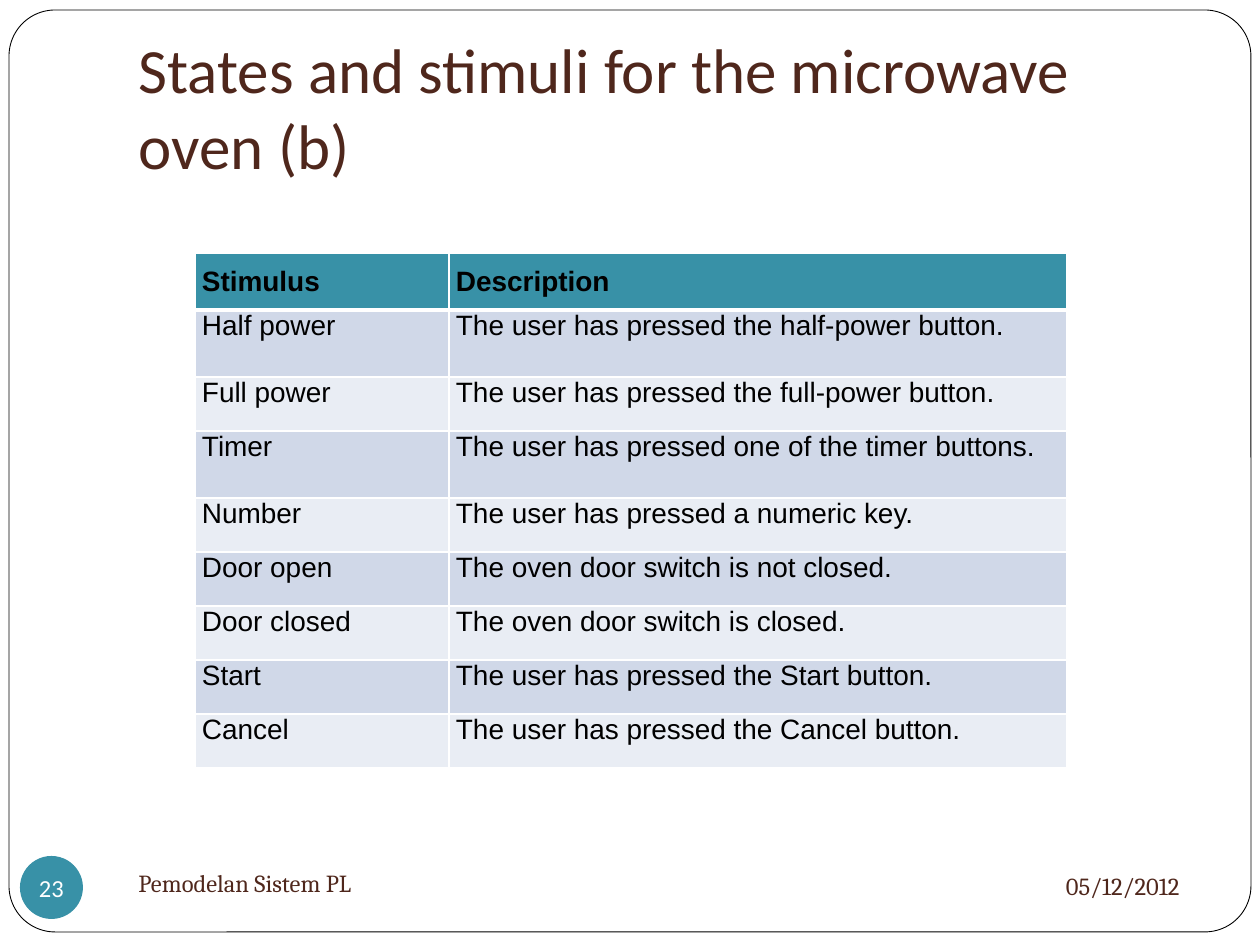
from lxml.etree import SubElement
from pptx import Presentation
from pptx.dml.color import RGBColor
from pptx.enum.shapes import MSO_SHAPE
from pptx.enum.text import MSO_ANCHOR, MSO_AUTO_SIZE, PP_ALIGN
from pptx.oxml.ns import qn
from pptx.util import Emu, Pt

COLORS = {
    "paper": "FFFFFF",
    "ink": "000000",
    "brown": "4F271C",
    "teal": "3891A7",
    "band_dark": "D0D8E8",
    "band_light": "E9EDF4",
}
STIMULI = [
    ("Stimulus", "Description"),
    ("Half power", "The user has pressed the half-power button."),
    ("Full power", "The user has pressed the full-power button."),
    ("Timer", "The user has pressed one of the timer buttons."),
    ("Number", "The user has pressed a numeric key."),
    ("Door open", "The oven door switch is not closed."),
    ("Door closed", "The oven door switch is closed."),
    ("Start", "The user has pressed the Start button."),
    ("Cancel", "The user has pressed the Cancel button."),
]
COLUMN_WIDTHS = (254, 618)
ROW_HEIGHTS = (54, 67, 54, 67, 54, 54, 54, 54, 54)


def px(length):
    return Emu(round(length * 914400 / 126))


def color(name):
    return RGBColor.from_string(COLORS[name])


def write(frame, text, size=14, font="Cambria", ink="brown", bold=False,
          align=PP_ALIGN.LEFT, anchor=MSO_ANCHOR.MIDDLE, wrap=True):
    frame.word_wrap = wrap
    frame.vertical_anchor = anchor
    paragraph = frame.paragraphs[0]
    paragraph.alignment = align
    run = paragraph.add_run()
    run.text = text
    run.font.size = Pt(size)
    run.font.name = font
    run.font.bold = bold
    run.font.color.rgb = color(ink)


class SlideBuilder:
    """Holds the style and the current slide, and adds each kind of element."""

    def __init__(self, slide):
        self.slide = slide
        self.shapes = slide.shapes

    def title(self, text, *box):
        heading = self.shapes.title
        heading.left, heading.top, heading.width, heading.height = map(px, box)
        frame = heading.text_frame
        frame.auto_size = MSO_AUTO_SIZE.NONE
        frame.margin_bottom = px(13)
        write(frame, text, size=36, font="Calibri", anchor=MSO_ANCHOR.BOTTOM)

    def shape(self, kind, fill, *box):
        shape = self.shapes.add_shape(kind, *map(px, box))
        shape.shadow.inherit = False
        shape.fill.solid()
        shape.fill.fore_color.rgb = color(fill)
        shape.line.fill.background()
        return shape

    def border(self, *box):
        frame = self.shape(MSO_SHAPE.ROUNDED_RECTANGLE, "paper", *box)
        frame.adjustments[0] = 0.05
        frame.line.color.rgb = color("ink")
        frame.line.width = Pt(0.5)
        self.shapes.title.element.addprevious(frame.element)

    def badge(self, text, *box):
        frame = self.shape(MSO_SHAPE.OVAL, "teal", *box).text_frame
        frame.margin_left = frame.margin_right = 0
        frame.margin_top = frame.margin_bottom = 0
        write(frame, text, font="Calibri", ink="paper", align=PP_ALIGN.CENTER, wrap=False)

    def label(self, text, *box, **style):
        write(self.shapes.add_textbox(*map(px, box)).text_frame, text, **style)

    def cell_borders(self, cell, **widths):
        properties = cell._tc.get_or_add_tcPr()
        for side in "LRTB":
            line = SubElement(properties, qn(f"a:ln{side}"), w=str(Pt(widths.get(side, 1))))
            fill = SubElement(line, qn("a:solidFill"))
            SubElement(fill, qn("a:srgbClr"), val=COLORS["paper"])

    def cell(self, cell, text, row):
        header = row == 0
        self.cell_borders(cell, B=3 if header else 1, T=3 if row == 1 else 1)
        cell.fill.solid()
        band = "band_dark" if row % 2 else "band_light"
        cell.fill.fore_color.rgb = color("teal" if header else band)
        cell.margin_left = cell.margin_right = px(7)
        cell.margin_top = px(13 if header else 0)
        cell.margin_bottom = px(13)
        cell.vertical_anchor = MSO_ANCHOR.TOP
        write(cell.text_frame, text, size=16, font="Arial", ink="ink", bold=header,
              align=PP_ALIGN.JUSTIFY, anchor=None)

    def table(self, rows, widths, heights, left, top):
        size = (sum(widths), sum(heights))
        table = self.shapes.add_table(
            len(rows), len(widths), *map(px, (left, top, *size))).table
        for column, width in zip(table.columns, widths):
            column.width = px(width)
        for index, (texts, height) in enumerate(zip(rows, heights)):
            table.rows[index].height = px(height)
            for column, text in enumerate(texts):
                self.cell(table.cell(index, column), text, index)


def main():
    deck = Presentation()
    deck.slide_width, deck.slide_height = px(1260), px(945)
    builder = SlideBuilder(deck.slides.add_slide(deck.slide_layouts[5]))
    builder.border(9, 10, 1242, 922)
    builder.title("States and stimuli for the microwave oven (b)", 126, 38, 1071, 157)
    builder.table(STIMULI, COLUMN_WIDTHS, ROW_HEIGHTS, 195, 253)
    builder.badge("23", 20, 856, 63, 63)
    builder.label("Pemodelan Sistem PL", 126, 851, 546, 63)
    builder.label("05/12/2012", 851, 853, 341, 66, align=PP_ALIGN.RIGHT)
    deck.save("out.pptx")


if __name__ == "__main__":
    main()
